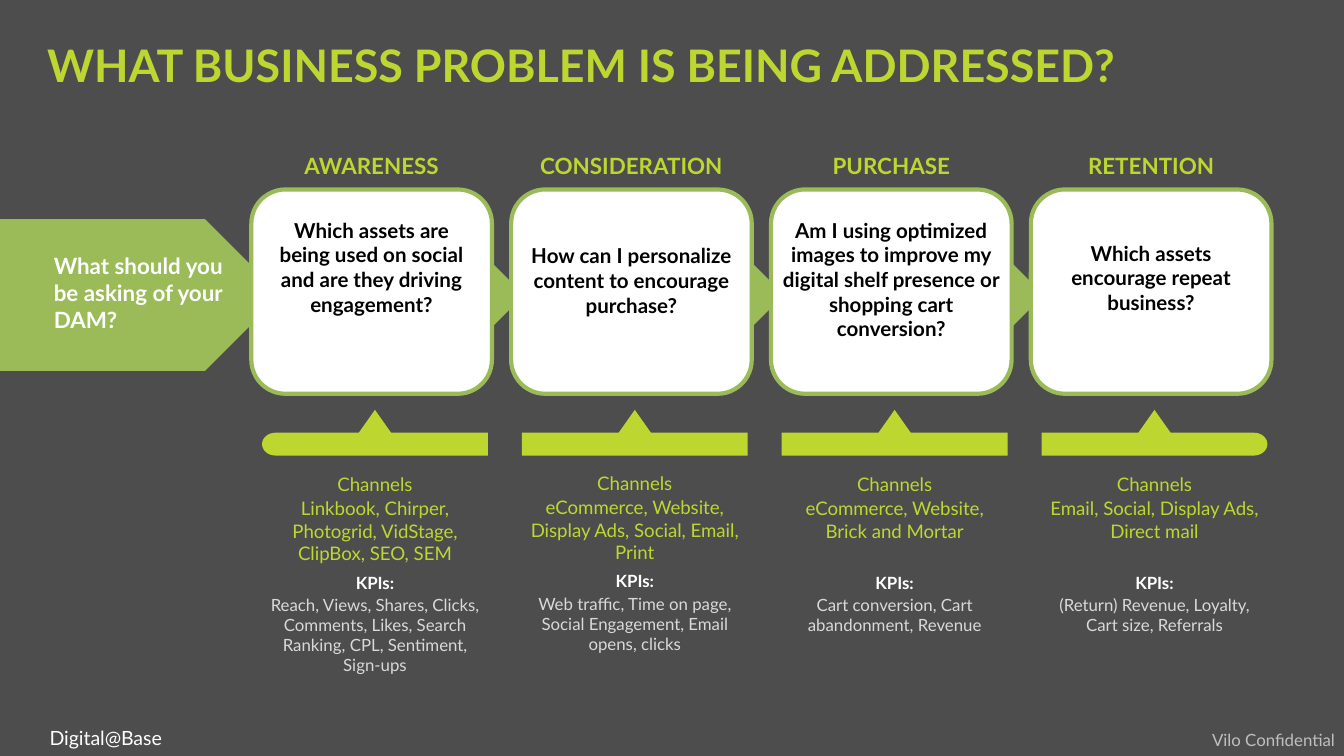
"""Build a slide of the questions, channels and KPIs at each customer stage."""
from dataclasses import dataclass
from math import cos, pi, sin
from typing import Optional

from pptx import Presentation
from pptx.dml.color import RGBColor
from pptx.enum.shapes import MSO_SHAPE
from pptx.enum.text import MSO_ANCHOR, PP_ALIGN
from pptx.util import Inches, Pt

FONT = "Lato"
LIME = RGBColor(0xBE, 0xD7, 0x30)
GREEN = RGBColor(0x9B, 0xBB, 0x59)
WHITE = RGBColor(0xFF, 0xFF, 0xFF)
BLACK = RGBColor(0x00, 0x00, 0x00)
PALE = RGBColor(0xD9, 0xD9, 0xD9)
SILVER = RGBColor(0xBF, 0xBF, 0xBF)
CHARCOAL = RGBColor(0x4D, 0x4D, 0x4D)

PAGE_WIDTH = 10
PAGE_HEIGHT = PAGE_WIDTH * 9 / 16
FIRST_LEFT, LAST_LEFT = 1.87, 7.67
CARD_WIDTH = 1.79
TAB_WIDTH, TAB_INDENT = 1.68, 0.08
TIP_TOP, TAB_TOP, TAB_BOTTOM = 3.05, 3.22, 3.39
DETAIL_WIDTH, DETAIL_INDENT = 1.6, 0.12


@dataclass
class Line:
    text: str
    size: float
    color: RGBColor
    bold: bool = False
    before: float = 0
    spacing: Optional[float] = None


@dataclass
class Stage:
    name: str
    question: str
    question_top: float
    question_width: float
    channels: str
    kpis: str
    detail_top: float = 3.52
    rounded: str = ""


STAGES = [
    Stage("AWARENESS",
          "Which assets are being used on social and are they driving engagement?",
          1.62, 1.44, "Linkbook, Chirper, Photogrid, VidStage, ClipBox, SEO, SEM",
          "Reach, Views, Shares, Clicks, Comments, Likes, Search Ranking, CPL, Sentiment, Sign-ups",
          rounded="left"),
    Stage("CONSIDERATION", "How can I personalize content to encourage purchase?",
          1.81, 1.61, "eCommerce, Website, Display Ads, Social, Email, Print",
          "Web traffic, Time on page, Social Engagement, Email opens, clicks",
          detail_top=3.51),
    Stage("PURCHASE",
          "Am I using optimized images to improve my digital shelf presence or shopping cart conversion?",
          1.62, 1.64, "eCommerce, Website, Brick and Mortar",
          "Cart conversion, Cart abandonment, Revenue"),
    Stage("RETENTION", "Which assets encourage repeat business?",
          1.79, 1.44, "Email, Social, Display Ads, Direct mail",
          "(Return) Revenue, Loyalty, Cart size, Referrals", rounded="right"),
]


def add_text(page, left: float, top: float, width: float, height: float,
             lines: list[Line], align=PP_ALIGN.CENTER, anchor=MSO_ANCHOR.TOP,
             insets: tuple = (0, 0, 0, 0)) -> None:
    box = page.shapes.add_textbox(Inches(left), Inches(top), Inches(width), Inches(height))
    frame = box.text_frame
    frame.word_wrap = True
    frame.vertical_anchor = anchor
    (frame.margin_left, frame.margin_top,
     frame.margin_right, frame.margin_bottom) = map(Inches, insets)
    for index, line in enumerate(lines):
        para = frame.add_paragraph() if index else frame.paragraphs[0]
        para.text = line.text
        para.alignment = align
        if line.before:
            para.space_before = Pt(line.before)
        if line.spacing:
            para.line_spacing = line.spacing
        para.font.name = FONT
        para.font.size = Pt(line.size)
        para.font.bold = line.bold
        para.font.color.rgb = line.color


def add_shape(page, kind: MSO_SHAPE, left: float, top: float, width: float,
              height: float, fill: RGBColor, outline: Optional[RGBColor] = None) -> None:
    shape = page.shapes.add_shape(kind, Inches(left), Inches(top), Inches(width), Inches(height))
    shape.shadow.inherit = False
    shape.fill.solid()
    shape.fill.fore_color.rgb = fill
    if outline is None:
        shape.line.fill.background()
    else:
        shape.line.color.rgb = outline
        shape.line.width = Pt(2.25)


def tab_end(edge: float, side: int, rounded: bool) -> list[tuple[float, float]]:
    """Return the points of a tab end from top to bottom; side is -1 left, 1 right."""
    if not rounded:
        return [(edge, TAB_TOP), (edge, TAB_BOTTOM)]
    radius_x, radius_y = 0.1, (TAB_BOTTOM - TAB_TOP) / 2
    angles = [pi * step / 16 for step in range(17)]
    return [(edge + side * radius_x * (sin(angle) - 1), TAB_TOP + radius_y * (1 - cos(angle)))
            for angle in angles]


def add_tab(page, left: float, rounded: str) -> None:
    center = left + TAB_WIDTH / 2
    points = [(center - 0.12, TAB_TOP), (center, TIP_TOP), (center + 0.12, TAB_TOP)]
    points += tab_end(left + TAB_WIDTH, 1, rounded == "right")
    points += reversed(tab_end(left, -1, rounded == "left"))
    corners = [(Inches(x), Inches(y)) for x, y in points]
    builder = page.shapes.build_freeform(*corners[0])
    builder.add_line_segments(corners[1:], close=True)
    tab = builder.convert_to_shape()
    tab.shadow.inherit = False
    tab.fill.solid()
    tab.fill.fore_color.rgb = LIME
    tab.line.fill.background()


def add_stage(page, left: float, stage: Stage) -> None:
    add_text(page, left, 1.08, CARD_WIDTH, 0.28,
             [Line(stage.name, 12, LIME, bold=True, spacing=1.15)],
             anchor=MSO_ANCHOR.MIDDLE, insets=(0.1, 0.1, 0.1, 0.1))
    add_shape(page, MSO_SHAPE.ROUNDED_RECTANGLE, left, 1.41, CARD_WIDTH, 1.52, WHITE, GREEN)
    add_text(page, left + (CARD_WIDTH - stage.question_width) / 2, stage.question_top,
             stage.question_width, 0.81, [Line(stage.question, 11, BLACK, bold=True)])
    add_tab(page, left + TAB_INDENT, stage.rounded)
    detail_left = left + DETAIL_INDENT
    add_text(page, detail_left, stage.detail_top, DETAIL_WIDTH, 0.7,
             [Line("Channels", 10, LIME), Line(stage.channels, 10, LIME, before=1)])
    add_text(page, detail_left, stage.detail_top + 0.74, DETAIL_WIDTH, 0.8,
             [Line("KPIs:", 9, WHITE, bold=True), Line(stage.kpis, 9, PALE, before=1)])


def main() -> None:
    deck = Presentation()
    deck.slide_width, deck.slide_height = Inches(PAGE_WIDTH), Inches(PAGE_HEIGHT)
    page = deck.slides.add_slide(deck.slide_layouts[6])
    page.background.fill.solid()
    page.background.fill.fore_color.rgb = CHARCOAL

    normal_insets = (0.1, 0.05, 0.1, 0.05)
    add_text(page, 0.27, 5.35, 1.12, 0.28, [Line("Digital@Base", 10.5, WHITE)],
             PP_ALIGN.LEFT, insets=normal_insets)
    add_text(page, 8.18, 5.38, 1.85, 0.25, [Line("Vilo Confidential", 9, SILVER)],
             PP_ALIGN.RIGHT, insets=normal_insets)
    add_text(page, 0.35, 0.23, 9.29, 0.5,
             [Line("WHAT BUSINESS PROBLEM IS BEING ADDRESSED?", 24, LIME, bold=True)],
             PP_ALIGN.LEFT, MSO_ANCHOR.MIDDLE, (0, 0.05, 0.1, 0.05))

    pitch = (LAST_LEFT - FIRST_LEFT) / (len(STAGES) - 1)
    lefts = [FIRST_LEFT + pitch * index for index in range(len(STAGES))]
    add_shape(page, MSO_SHAPE.PENTAGON, 0, 1.63, 2.09, 1.13, GREEN)
    add_text(page, 0.4, 1.88, 1.29, 0.64,
             [Line("What should you be asking of your DAM?", 12, WHITE, bold=True)],
             PP_ALIGN.LEFT)
    for left in lefts[:-1]:
        add_shape(page, MSO_SHAPE.PENTAGON, left + 0.85, 1.63, 1.18, 1.13, GREEN)
    for left, stage in zip(lefts, STAGES):
        add_stage(page, left, stage)
    deck.save("out.pptx")


if __name__ == "__main__":
    main()
